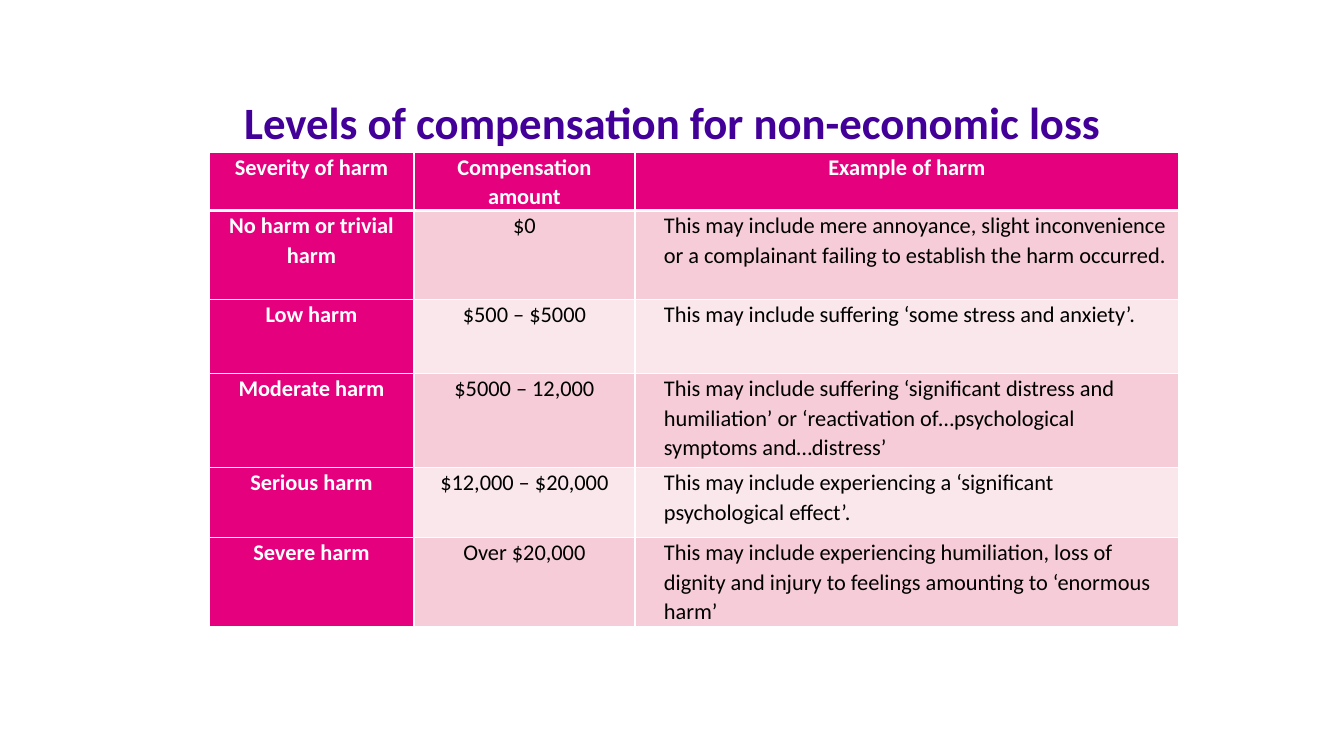
from lxml import etree
from pptx import Presentation
from pptx.dml.color import RGBColor
from pptx.enum.text import MSO_ANCHOR, PP_ALIGN
from pptx.oxml.ns import qn
from pptx.util import Emu, Pt

CENTER, LEFT = PP_ALIGN.CENTER, PP_ALIGN.LEFT
TOP = MSO_ANCHOR.TOP
PX = 914400 / 100.8
COLORS = {
    "title": "430098",
    "pink": "E5007D",
    "band": "F5CCD7",
    "pale": "FAE7EC",
    "white": "FFFFFF",
    "black": "000000",
}
COLUMN_WIDTHS = [205, 221, 544]
ROW_HEIGHTS = [58, 89, 74, 94, 70, 89]
LEVELS = [
    ("Severity of harm", "Compensation amount", "Example of harm"),
    ("No harm or trivial harm", "$0",
     "This may include mere annoyance, slight inconvenience or a complainant "
     "failing to establish the harm occurred."),
    ("Low harm", "$500 – $5000",
     "This may include suffering ‘some stress and anxiety’."),
    ("Moderate harm", "$5000 – 12,000",
     "This may include suffering ‘significant distress and humiliation’ or "
     "‘reactivation of…psychological symptoms and…distress’"),
    ("Serious harm", "$12,000 – $20,000",
     "This may include experiencing a ‘significant psychological effect’."),
    ("Severe harm", "Over $20,000",
     "This may include experiencing humiliation, loss of dignity and injury to "
     "feelings amounting to ‘enormous harm’"),
]


def px(length):
    return Emu(round(length * PX))


def write(frame, text, size=16, color="black", bold=False, align=CENTER,
          spacing=1.07, after=6, indent=0):
    frame.word_wrap = True
    paragraph = frame.paragraphs[0]
    paragraph.alignment = align
    paragraph.line_spacing = spacing
    paragraph.space_before = Pt(0)
    paragraph.space_after = Pt(after)
    if indent:
        properties = paragraph._p.get_or_add_pPr()
        properties.set("marL", str(px(indent)))
        properties.set("indent", "0")
    run = paragraph.add_run()
    run.text = text
    run.font.name = "Calibri"
    run.font.size = Pt(size)
    run.font.bold = bold
    run.font.color.rgb = RGBColor.from_string(COLORS[color])


presentation = Presentation()
presentation.slide_width, presentation.slide_height = px(1344), px(756)
slide = presentation.slides.add_slide(presentation.slide_layouts[5])

title = slide.shapes.title
title.left, title.top, title.width, title.height = px(68), px(90), px(1209), px(61)
heading = title.text_frame
heading.margin_left = heading.margin_right = 0
heading.margin_top = heading.margin_bottom = px(5)
heading.vertical_anchor = TOP
write(heading, "Levels of compensation for non-economic loss", size=32,
      color="title", bold=True, spacing=1.0, after=0)

harm_table = slide.shapes.add_table(
    len(LEVELS), len(COLUMN_WIDTHS), px(209), px(152),
    px(sum(COLUMN_WIDTHS)), px(sum(ROW_HEIGHTS))).table
for column, width in zip(harm_table.columns, COLUMN_WIDTHS):
    column.width = px(width)

for r, level in enumerate(LEVELS):
    harm_table.rows[r].height = px(ROW_HEIGHTS[r])
    for c, text in enumerate(level):
        cell = harm_table.cell(r, c)
        cell.margin_left = cell.margin_right = px(6)
        cell.margin_top = cell.margin_bottom = 0
        cell.vertical_anchor = TOP
        is_heading = r == 0 or c == 0
        is_example = r > 0 and c == 2
        write(cell.text_frame, text, bold=is_heading,
              color="white" if is_heading else "black",
              align=LEFT if is_example else CENTER,
              after=6 if r else 8, indent=23 if is_example else 0)

        cell_properties = cell._tc.get_or_add_tcPr()
        for side in "LRTB":
            thick = (r == 0 and side == "B") or (r == 1 and side == "T")
            border = etree.SubElement(cell_properties, qn("a:ln" + side),
                                      w=str(Pt(3 if thick else 1)))
            paint = etree.SubElement(border, qn("a:solidFill"))
            etree.SubElement(paint, qn("a:srgbClr"), val=COLORS["white"])
        fill = "pink" if is_heading else "band" if r % 2 else "pale"
        cell.fill.solid()
        cell.fill.fore_color.rgb = RGBColor.from_string(COLORS[fill])

presentation.save("out.pptx")
